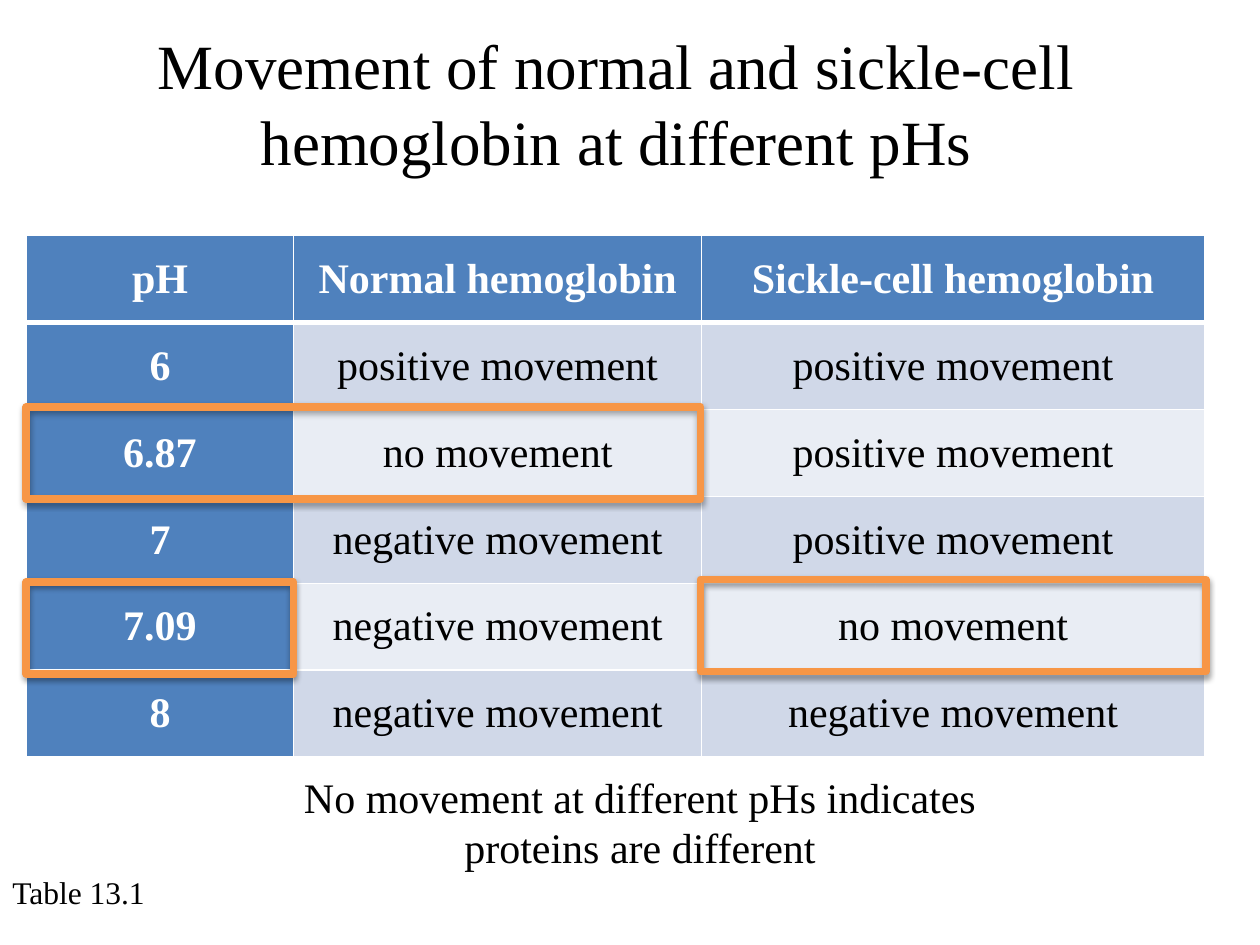
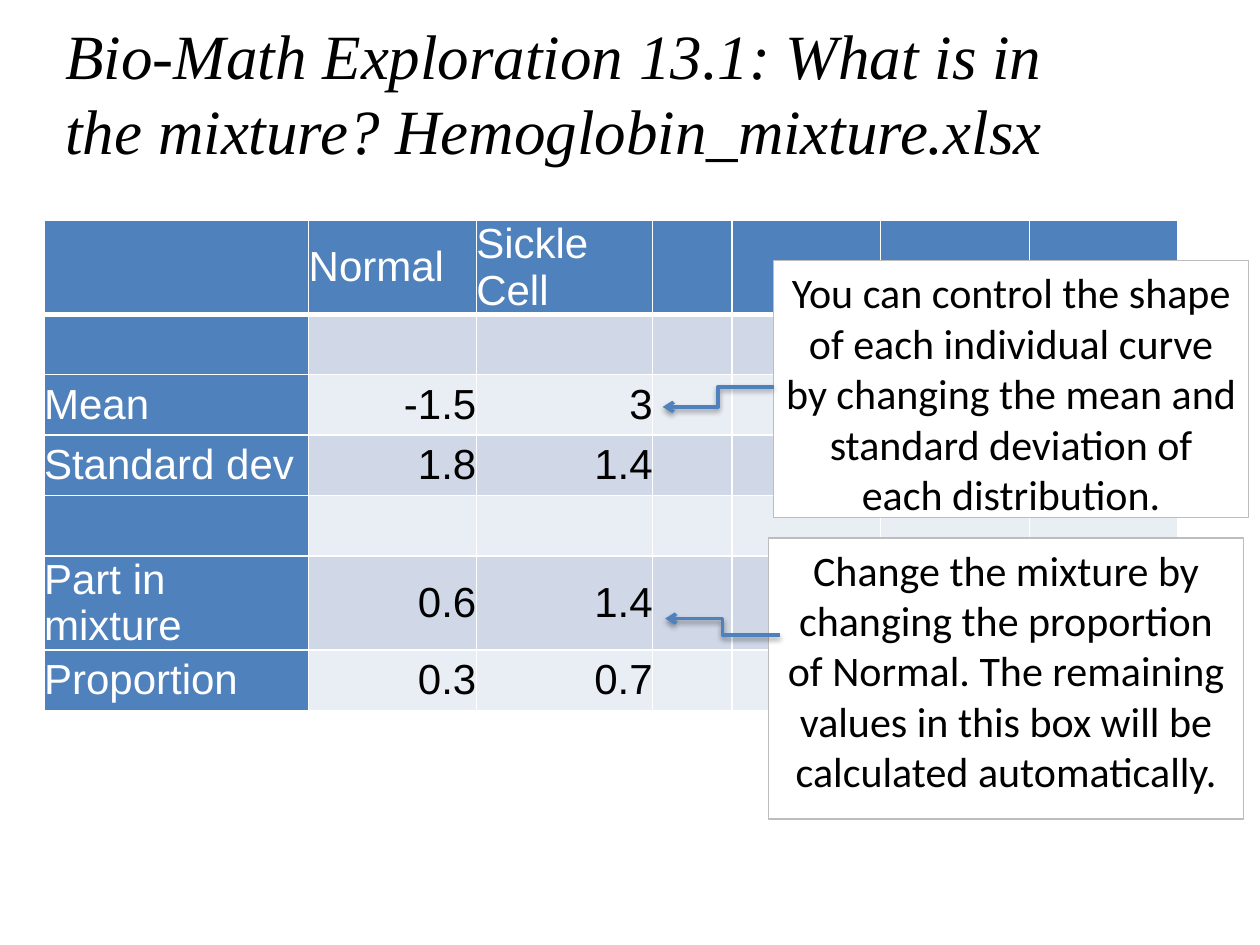
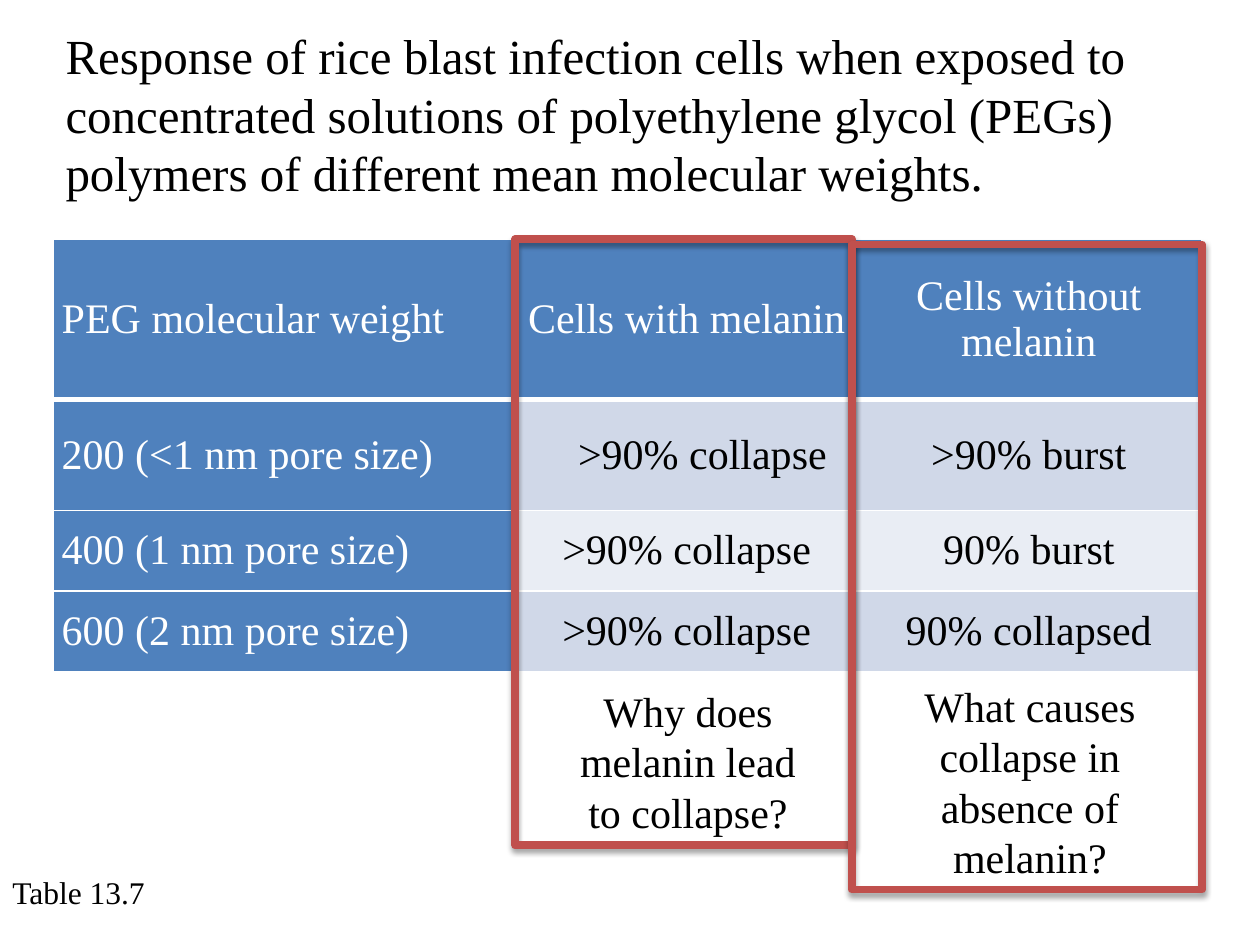
from dataclasses import dataclass

import pptx
import pptx.dml.color
import pptx.enum.shapes
import pptx.enum.text
import pptx.oxml
import pptx.oxml.ns
import pptx.presentation
import pptx.shapes.base
import pptx.slide
import pptx.table
import pptx.text.text
import pptx.util

Inches = pptx.util.Inches
RGBColor = pptx.dml.color.RGBColor
Align = pptx.enum.text.PP_ALIGN
Anchor = pptx.enum.text.MSO_ANCHOR
AutoSize = pptx.enum.text.MSO_AUTO_SIZE

BLACK = RGBColor(0x00, 0x00, 0x00)
WHITE = RGBColor(0xFF, 0xFF, 0xFF)
BLUE = RGBColor(0x4F, 0x81, 0xBD)
BAND_DARK = RGBColor(0xD0, 0xD8, 0xE8)
BAND_LIGHT = RGBColor(0xE9, 0xED, 0xF4)
ORANGE = RGBColor(0xF7, 0x96, 0x46)
RED = RGBColor(0xC0, 0x50, 0x4D)
GRAY = RGBColor(0xBD, 0xBD, 0xBD)

SERIF = "Times New Roman"
TITLE_ONLY_LAYOUT = 5


@dataclass(frozen=True)
class Box:
    """A rectangle on the slide, in inches."""

    left: float
    top: float
    width: float
    height: float

    def lengths(self) -> tuple[pptx.util.Length, ...]:
        return tuple(Inches(value) for value in (self.left, self.top, self.width, self.height))


@dataclass(frozen=True)
class TextStyle:
    """Font and alignment of a text."""

    size: int = 24
    font: str = SERIF
    color: RGBColor = BLACK
    bold: bool = False
    italic: bool = False
    align: Align = Align.CENTER


@dataclass(frozen=True)
class TableSpec:
    """Contents, grid and text settings of a banded table."""

    left: float
    top: float
    columns: tuple[float, ...]
    heights: tuple[float, ...]
    rows: tuple[tuple[str, ...], ...]
    side_margin: float = 0.07
    font: str = SERIF
    bold_headings: bool = False
    label_align: Align = Align.LEFT
    header_align: Align = Align.CENTER
    value_align: Align = Align.CENTER


@dataclass(frozen=True)
class Callout:
    """A note box and the elbow arrow from it to the table."""

    box: Box
    text: str
    start: tuple[float, float]
    end: tuple[float, float]


HEMOGLOBIN_TABLE = TableSpec(
    0.21, 1.87, (2.12, 3.24, 3.99), (0.69,) * 6,
    (
        ("pH", "Normal hemoglobin", "Sickle-cell hemoglobin"),
        ("6", "positive movement", "positive movement"),
        ("6.87", "no movement", "positive movement"),
        ("7", "negative movement", "positive movement"),
        ("7.09", "negative movement", "no movement"),
        ("8", "negative movement", "negative movement"),
    ),
    bold_headings=True,
    label_align=Align.CENTER,
)

MIXTURE_TABLE = TableSpec(
    0.35, 1.75, (2.1, 1.33, 1.4, 0.63, 1.18, 1.18, 1.18), (0.48,) * 7,
    (
        ("", "Normal", "Sickle Cell"),
        (),
        ("Mean", "-1.5", "3"),
        ("Standard dev", "1.8", "1.4"),
        (),
        ("Part in mixture", "0.6", "1.4"),
        ("Proportion", "0.3", "0.7"),
    ),
    side_margin=0,
    font="Arial",
    header_align=Align.LEFT,
    value_align=Align.RIGHT,
)

MELANIN_TABLE = TableSpec(
    0.42, 1.9, (3.69, 2.68, 2.75), (1.27, 0.88, 0.64, 0.64),
    (
        ("PEG molecular weight", "Cells with melanin", "Cells without melanin"),
        ("200 (<1 nm pore size)", ">90% collapse", ">90% burst"),
        ("400 (1 nm pore size)", ">90% collapse", "90% burst"),
        ("600 (2 nm pore size)", ">90% collapse", "90% collapsed"),
    ),
)

NO_MOVEMENT_FRAMES = (
    Box(0.21, 3.23, 5.35, 0.73),
    Box(0.21, 4.62, 2.12, 0.73),
    Box(5.56, 4.6, 4.01, 0.73),
)

CALLOUTS = (
    Callout(
        Box(6.14, 2.07, 3.77, 2.04),
        "You can control the shape of each individual curve by changing the mean "
        "and standard deviation of each distribution.",
        (6.14, 3.07), (5.26, 3.23),
    ),
    Callout(
        Box(6.1, 4.27, 3.77, 2.23),
        "Change the mixture by changing the proportion of Normal. The remaining "
        "values in this box will be calculated automatically.",
        (6.19, 5.04), (5.28, 4.91),
    ),
)

MELANIN_QUESTIONS = (
    (Box(4.35, 5.39, 2.22, 1.31), "Why does melanin lead to collapse?", Box(4.09, 1.9, 2.67, 4.81)),
    (Box(6.81, 5.35, 2.73, 1.72), "What causes collapse in absence of melanin?",
     Box(6.76, 1.94, 2.78, 5.12)),
)


def write_text(frame: pptx.text.text.TextFrame, text: str, style: TextStyle) -> None:
    """Put one styled run into the first paragraph."""
    paragraph = frame.paragraphs[0]
    paragraph.alignment = style.align
    run = paragraph.add_run()
    run.text = text
    font = run.font
    font.size = pptx.util.Pt(style.size)
    font.name = style.font
    font.color.rgb = style.color
    font.bold = style.bold
    font.italic = style.italic


def add_titled_slide(
    presentation: pptx.presentation.Presentation, box: Box, text: str, style: TextStyle
) -> pptx.slide.Slide:
    """Add a slide whose title placeholder is moved and formatted."""
    slide = presentation.slides.add_slide(presentation.slide_layouts[TITLE_ONLY_LAYOUT])
    title = slide.shapes.title
    title.left, title.top, title.width, title.height = box.lengths()
    frame = title.text_frame
    frame.auto_size = AutoSize.NONE
    frame.vertical_anchor = Anchor.TOP
    write_text(frame, text, style)
    return slide


def add_text(
    slide: pptx.slide.Slide, box: Box, text: str, style: TextStyle, wrap: bool = True
) -> None:
    """Add a text box."""
    frame = slide.shapes.add_textbox(*box.lengths()).text_frame
    frame.word_wrap = wrap
    write_text(frame, text, style)


def add_table_number(slide: pptx.slide.Slide, text: str) -> None:
    """Add the table number in the lower left corner."""
    add_text(slide, Box(0, 6.88, 1.26, 0.4), text, TextStyle(size=18, align=Align.LEFT), wrap=False)


def set_shadow(shape: pptx.shapes.base.BaseShape, opacity: int) -> None:
    """Give a shape a soft black shadow below it."""
    shape._element.spPr.append(pptx.oxml.parse_xml(
        f'<a:effectLst {pptx.oxml.ns.nsdecls("a")}>'
        '<a:outerShdw blurRad="40000" dist="23000" dir="5400000" rotWithShape="0">'
        f'<a:srgbClr val="{BLACK}"><a:alpha val="{opacity * 1000}"/></a:srgbClr>'
        "</a:outerShdw></a:effectLst>"
    ))


def add_frame(slide: pptx.slide.Slide, box: Box, color: RGBColor) -> None:
    """Add a hollow highlight frame with a shadow."""
    frame = slide.shapes.add_shape(pptx.enum.shapes.MSO_SHAPE.RECTANGLE, *box.lengths())
    frame.fill.background()
    frame.line.color.rgb = color
    frame.line.width = pptx.util.Pt(4.5)
    set_shadow(frame, 35)


def set_borders(cell: pptx.table._Cell, is_header: bool) -> None:
    """Draw white cell borders, thick between the header and the body."""
    properties = cell._tc.get_or_add_tcPr()
    for side in "LRTB":
        width = pptx.util.Pt(3 if is_header and side == "B" else 1)
        properties.append(pptx.oxml.parse_xml(
            f'<a:ln{side} {pptx.oxml.ns.nsdecls("a")} w="{width}">'
            f'<a:solidFill><a:srgbClr val="{WHITE}"/></a:solidFill></a:ln{side}>'
        ))


def add_banded_table(slide: pptx.slide.Slide, spec: TableSpec) -> pptx.table.Table:
    """Add a table with blue headings and banded rows."""
    box = Box(spec.left, spec.top, sum(spec.columns), sum(spec.heights))
    table = slide.shapes.add_table(len(spec.heights), len(spec.columns), *box.lengths()).table
    table.first_col = True
    for column, width in zip(table.columns, spec.columns):
        column.width = Inches(width)
    for row_index, (row, height, texts) in enumerate(zip(table.rows, spec.heights, spec.rows)):
        row.height = Inches(height)
        for column_index, cell in enumerate(row.cells):
            is_header = row_index == 0
            is_heading = is_header or column_index == 0
            set_borders(cell, is_header and len(spec.rows) > 1)
            cell.fill.solid()
            band = BAND_DARK if row_index % 2 else BAND_LIGHT
            cell.fill.fore_color.rgb = BLUE if is_heading else band
            cell.vertical_anchor = Anchor.MIDDLE
            cell.margin_left = cell.margin_right = Inches(spec.side_margin)
            cell.margin_top = cell.margin_bottom = 0
            if column_index >= len(texts) or not texts[column_index]:
                continue
            if column_index == 0:
                align = spec.label_align
            else:
                align = spec.header_align if is_header else spec.value_align
            write_text(cell.text_frame, texts[column_index], TextStyle(
                font=spec.font,
                color=WHITE if is_heading else BLACK,
                bold=is_heading and spec.bold_headings,
                align=align,
            ))
    return table


def add_callout(slide: pptx.slide.Slide, callout: Callout) -> None:
    """Add a note box with its elbow arrow."""
    note = slide.shapes.add_shape(pptx.enum.shapes.MSO_SHAPE.RECTANGLE, *callout.box.lengths())
    note.shadow.inherit = False
    note.fill.solid()
    note.fill.fore_color.rgb = WHITE
    note.line.color.rgb = GRAY
    note.line.width = pptx.util.Pt(0.75)
    note.text_frame.word_wrap = True
    note.text_frame.vertical_anchor = Anchor.TOP
    write_text(note.text_frame, callout.text, TextStyle(font="Calibri"))

    points = [Inches(value) for value in callout.start + callout.end]
    arrow = slide.shapes.add_connector(pptx.enum.shapes.MSO_CONNECTOR.ELBOW, *points)
    arrow.line.color.rgb = BLUE
    arrow.line.width = pptx.util.Pt(2)
    arrow.line._get_or_add_ln().append(
        pptx.oxml.parse_xml(f'<a:tailEnd {pptx.oxml.ns.nsdecls("a")} type="arrow"/>')
    )
    set_shadow(arrow, 38)


def build_hemoglobin_slide(presentation: pptx.presentation.Presentation) -> None:
    """Build the slide on hemoglobin movement."""
    slide = add_titled_slide(
        presentation, Box(0.21, 0.16, 9.36, 1.31),
        "Movement of normal and sickle-cell hemoglobin at different pHs", TextStyle(size=36),
    )
    add_table_number(slide, "Table 13.1")
    add_banded_table(slide, HEMOGLOBIN_TABLE)
    for box in NO_MOVEMENT_FRAMES:
        add_frame(slide, box, ORANGE)
    add_text(
        slide, Box(1.96, 6.07, 6.24, 0.91),
        "No movement at different pHs indicates proteins are different", TextStyle(),
    )


def build_mixture_slide(presentation: pptx.presentation.Presentation) -> None:
    """Build the slide on the hemoglobin mixture."""
    slide = add_titled_slide(
        presentation, Box(0.42, 0.08, 7.99, 1.31),
        "Bio-Math Exploration 13.1: What is in the mixture? Hemoglobin_mixture.xlsx",
        TextStyle(size=36, italic=True, align=Align.LEFT),
    )
    add_banded_table(slide, MIXTURE_TABLE)
    for callout in CALLOUTS:
        add_callout(slide, callout)


def build_melanin_slide(presentation: pptx.presentation.Presentation) -> None:
    """Build the slide on rice blast cells and melanin."""
    slide = add_titled_slide(
        presentation, Box(0.42, 0.15, 8.62, 1.51),
        "Response of rice blast infection cells when exposed to concentrated solutions of "
        "polyethylene glycol (PEGs) polymers of different mean molecular weights.",
        TextStyle(size=28, align=Align.LEFT),
    )
    add_table_number(slide, "Table 13.7")
    table = add_banded_table(slide, MELANIN_TABLE)
    indented = table.cell(1, 1).text_frame.paragraphs[0]
    indented._p.get_or_add_pPr().set("marL", str(Inches(0.25)))
    for question_box, question, frame_box in MELANIN_QUESTIONS:
        add_text(slide, question_box, question, TextStyle())
        add_frame(slide, frame_box, RED)


def main() -> None:
    """Build and save the presentation."""
    presentation = pptx.Presentation()
    presentation.slide_width = Inches(10)
    presentation.slide_height = Inches(7.5)
    build_hemoglobin_slide(presentation)
    build_mixture_slide(presentation)
    build_melanin_slide(presentation)
    presentation.save("out.pptx")


if __name__ == "__main__":
    main()
